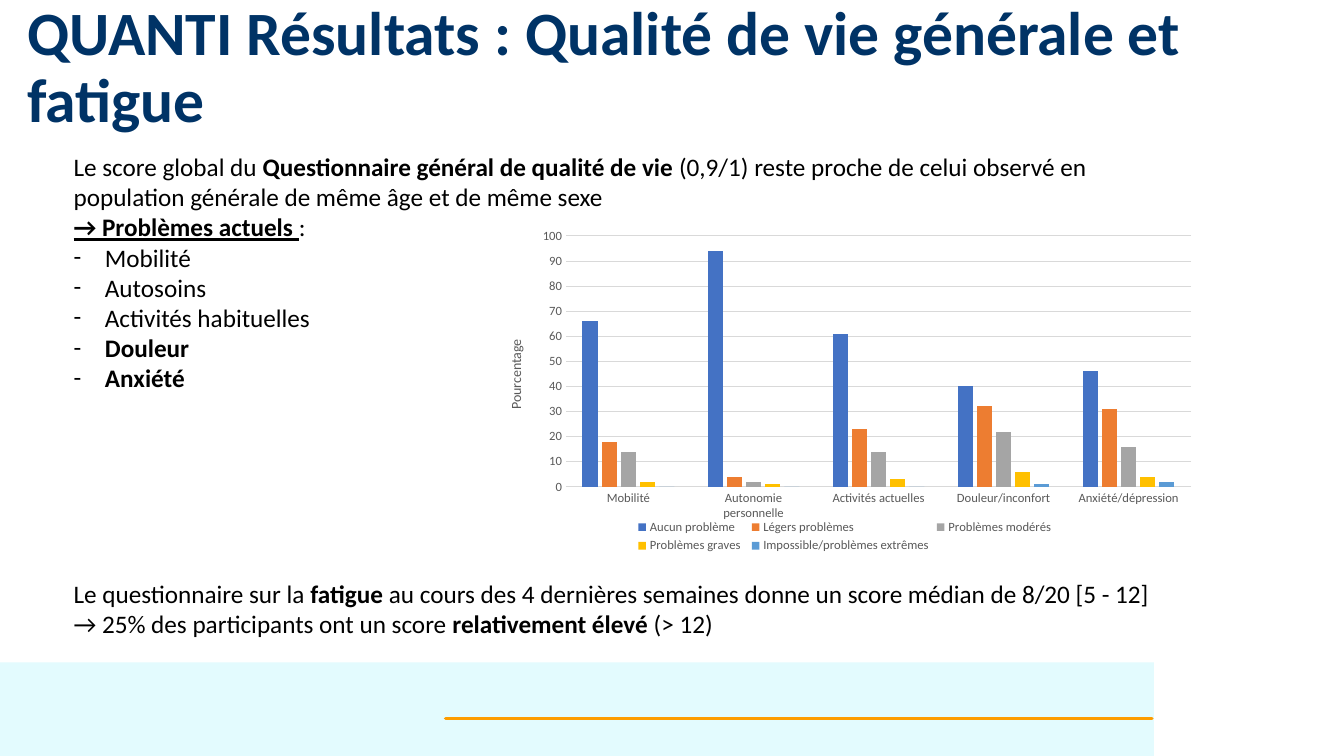
from dataclasses import dataclass

import pptx
import pptx.chart.data
import pptx.dml.color
import pptx.enum.chart
import pptx.enum.dml
import pptx.enum.shapes
import pptx.enum.text
import pptx.oxml.ns
import pptx.util
from lxml import etree

Cm = pptx.util.Cm
Pt = pptx.util.Pt
qn = pptx.oxml.ns.qn


@dataclass(frozen=True)
class Theme:
    font: str = "Calibri"
    navy: str = "003366"
    ink: str = "000000"
    gray: str = "595959"
    rule: str = "D9D9D9"
    band: str = "E3FBFE"
    gold: str = "FD9C00"
    head: float = 44
    body: float = 18
    axis: float = 10
    tick: float = 9


@dataclass(frozen=True)
class Span:
    text: str
    bold: bool = False
    under: bool = False


@dataclass(frozen=True)
class Line:
    spans: tuple[Span, ...]
    dash: bool = False
    gap: float = 0


@dataclass(frozen=True)
class Series:
    name: str
    color: str
    values: tuple[int, ...]


THEME = Theme()
HEAD = "QUANTI Résultats : Qualité de vie générale et fatigue"
INTRO = (
    Line((Span("Le score global du "),
          Span("Questionnaire général de qualité de vie ", bold=True),
          Span("(0,9/1) reste proche de celui observé en population générale "
               "de même âge et de même sexe"))),
    Line((Span("→ Problèmes actuels ", bold=True, under=True), Span(":"))),
)
ISSUES = tuple(
    Line((Span(name, bold=name in ("Douleur", "Anxiété")),), dash=True)
    for name in ("Mobilité", "Autosoins", "Activités habituelles", "Douleur", "Anxiété")
)
FATIGUE = (
    Line((Span("Le questionnaire sur la "), Span("fatigue", bold=True),
          Span(" au cours des 4 dernières semaines donne un score médian de 8/20 [5 - 12]")),
         gap=132),
    Line((Span("→ 25% des participants ont un score "),
          Span("relativement élevé", bold=True), Span(" (> 12)"))),
)
GROUPS = ("Mobilité", "Autonomie personnelle", "Activités actuelles",
          "Douleur/inconfort", "Anxiété/dépression")
SERIES = (
    Series("Aucun problème", "4472C4", (66, 94, 61, 40, 46)),
    Series("Légers problèmes", "ED7D31", (18, 4, 23, 32, 31)),
    Series("Problèmes modérés ", "A5A5A5", (14, 2, 14, 22, 16)),
    Series("Problèmes graves ", "FFC000", (2, 1, 3, 6, 4)),
    Series("Impossible/problèmes extrêmes", "5B9BD5", (0, 0, 0, 1, 2)),
)
PLOT = {"x": 0.11, "y": 0.04, "w": 0.87, "h": 0.75}


def rgb(code: str) -> pptx.dml.color.RGBColor:
    return pptx.dml.color.RGBColor.from_string(code)


def style(font, *, size: float, color: str, bold: bool = False, under: bool = False) -> None:
    font.name = THEME.font
    font.size = Pt(size)
    font.color.rgb = rgb(color)
    font.bold = bold
    font.underline = under


def write(para, text: str, **look) -> None:
    """Add a run of text in the given format."""
    run = para.add_run()
    run.text = text
    style(run.font, **look)


def place(shape, left: float, top: float, width: float, height: float) -> None:
    """Set a box in centimetres."""
    shape.left, shape.top = Cm(left), Cm(top)
    shape.width, shape.height = Cm(width), Cm(height)


def mark(para, dash: bool) -> None:
    """Give the paragraph a hanging dash, or no bullet."""
    props = para._p.get_or_add_pPr()
    hang = Cm(0.79) if dash else 0
    props.set("marL", str(hang))
    props.set("indent", str(-hang))
    if dash:
        etree.SubElement(props, qn("a:buFont"), typeface=THEME.font)
        etree.SubElement(props, qn("a:buChar"), char="-")
    else:
        etree.SubElement(props, qn("a:buNone"))


def add_band(slide) -> None:
    band = slide.shapes.add_shape(
        pptx.enum.shapes.MSO_SHAPE.RECTANGLE, Cm(0), Cm(16.69), Cm(29.08), Cm(2.36))
    band.shadow.inherit = False
    band.fill.solid()
    band.fill.fore_color.rgb = rgb(THEME.band)
    band.line.fill.background()
    rule = slide.shapes.add_connector(
        pptx.enum.shapes.MSO_CONNECTOR.STRAIGHT, Cm(11.23), Cm(18.11), Cm(29.03), Cm(18.11))
    rule.line.color.rgb = rgb(THEME.gold)
    rule.line.width = Pt(2.5)
    rule.line._get_or_add_ln().set("cap", "rnd")
    etree.SubElement(rule._element.spPr, qn("a:effectLst"))


def add_head(slide) -> None:
    title = slide.shapes.title
    place(title, 0.43, -0.1, 32.82, 3.68)
    frame = title.text_frame
    frame.auto_size = pptx.enum.text.MSO_AUTO_SIZE.NONE
    frame.vertical_anchor = pptx.enum.text.MSO_ANCHOR.MIDDLE
    para = frame.paragraphs[0]
    para.alignment = pptx.enum.text.PP_ALIGN.LEFT
    para.line_spacing = 0.9
    write(para, HEAD, size=THEME.head, color=THEME.navy, bold=True)


def add_body(slide, lines: tuple[Line, ...]) -> None:
    body = slide.placeholders[1]
    place(body, 1.6, 3.68, 28.52, 14.1)
    frame = body.text_frame
    frame.auto_size = pptx.enum.text.MSO_AUTO_SIZE.NONE
    for index, line in enumerate(lines):
        para = frame.add_paragraph() if index else frame.paragraphs[0]
        mark(para, line.dash)
        para.space_before = Pt(line.gap)
        for span in line.spans:
            write(para, span.text, size=THEME.body, color=THEME.ink,
                  bold=span.bold, under=span.under)


def set_axes(chart) -> None:
    for axis in (chart.category_axis, chart.value_axis):
        axis.major_tick_mark = axis.minor_tick_mark = pptx.enum.chart.XL_TICK_MARK.NONE
        style(axis.tick_labels.font, size=THEME.tick, color=THEME.gray)
    scale = chart.value_axis
    scale.minimum_scale, scale.maximum_scale, scale.major_unit = 0, 100, 10
    scale.format.line.fill.background()
    for line in (chart.category_axis.format.line, scale.major_gridlines.format.line):
        line.color.rgb = rgb(THEME.rule)
        line.width = Pt(0.75)
    frame = scale.axis_title.text_frame
    frame._txBody.bodyPr.set("rot", "-5400000")
    frame._txBody.bodyPr.set("vert", "horz")
    write(frame.paragraphs[0], "Pourcentage", size=THEME.axis, color=THEME.gray)


def fix_plot(chart) -> None:
    """Pin the inner plot area to fractions of the chart."""
    area = chart._chartSpace.chart.plotArea
    for old in area.findall(qn("c:layout")):
        area.remove(old)
    frame = etree.Element(qn("c:layout"))
    area.insert(0, frame)
    box = etree.SubElement(frame, qn("c:manualLayout"))
    etree.SubElement(box, qn("c:layoutTarget"), val="inner")
    for side in "xy":
        etree.SubElement(box, qn(f"c:{side}Mode"), val="edge")
    for side, share in PLOT.items():
        etree.SubElement(box, qn(f"c:{side}"), val=str(share))


def add_bars(slide) -> None:
    data = pptx.chart.data.CategoryChartData()
    data.categories = GROUPS
    for item in SERIES:
        data.add_series(item.name, item.values)
    chart = slide.shapes.add_chart(
        pptx.enum.chart.XL_CHART_TYPE.COLUMN_CLUSTERED,
        Cm(12.27), Cm(5.61), Cm(18.11), Cm(8.43), data).chart
    style(chart.font, size=THEME.axis, color=THEME.ink)
    chart.has_title = False
    chart.has_legend = True
    chart.legend.position = pptx.enum.chart.XL_LEGEND_POSITION.BOTTOM
    chart.legend.include_in_layout = False
    style(chart.legend.font, size=THEME.tick, color=THEME.gray)
    plot = chart.plots[0]
    plot.gap_width, plot.overlap, plot.vary_by_categories = 219, -27, False
    for bars, item in zip(plot.series, SERIES):
        bars.format.fill.solid()
        bars.format.fill.fore_color.rgb = rgb(item.color)
    set_axes(chart)
    fix_plot(chart)


def main() -> None:
    deck = pptx.Presentation()
    deck.slide_width, deck.slide_height = Cm(33.87), Cm(19.05)
    slide = deck.slides.add_slide(deck.slide_layouts[1])
    add_band(slide)
    add_head(slide)
    add_body(slide, INTRO + ISSUES + FATIGUE)
    add_bars(slide)
    deck.save("out.pptx")


if __name__ == "__main__":
    main()
